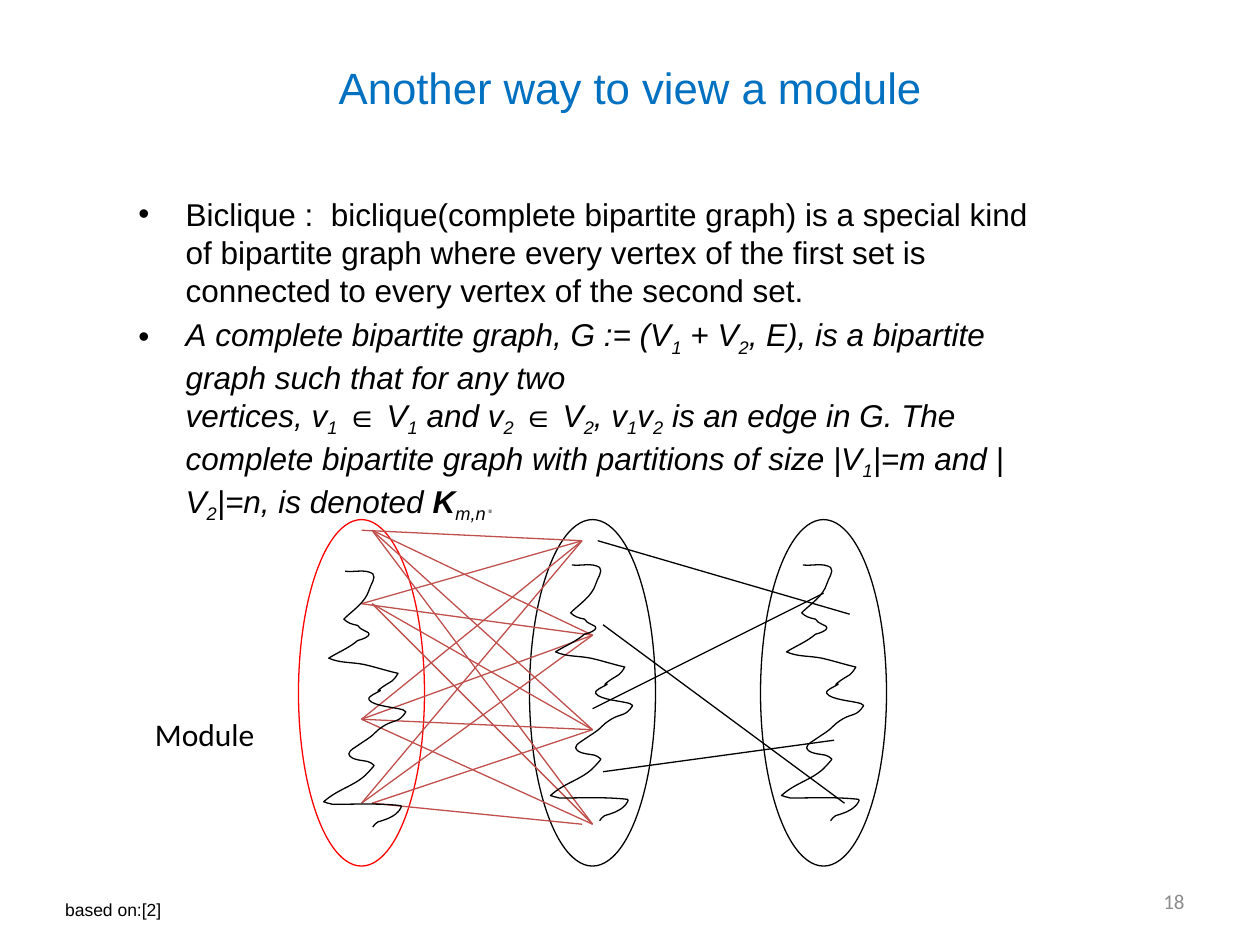
from lxml.etree import SubElement
from pptx import Presentation
from pptx.dml.color import RGBColor
from pptx.enum.shapes import MSO_CONNECTOR, MSO_SHAPE
from pptx.enum.text import MSO_ANCHOR, PP_ALIGN
from pptx.oxml.ns import qn
from pptx.util import Pt

BLACK = RGBColor(0x00, 0x00, 0x00)
BLUE = RGBColor(0x00, 0x70, 0xC0)
RED = RGBColor(0xFF, 0x00, 0x00)
BRICK = RGBColor(0xC0, 0x50, 0x4D)
GRAY = RGBColor(0x8C, 0x8C, 0x8C)

TITLE = ("Another way to view a module", (36, 21.6, 648, 56.2), "Arial", 25, BLUE, PP_ALIGN.CENTER, MSO_ANCHOR.MIDDLE)
LABELS = [
    ("18", (516, 500.4, 168, 28.8), "Calibri", 12, GRAY, PP_ALIGN.RIGHT, MSO_ANCHOR.MIDDLE),
    ("Module", (81.4, 404.9, 102.2, 28.8), "Calibri", 18, BLACK, PP_ALIGN.LEFT, MSO_ANCHOR.TOP),
    ("based on:[2]", (30.2, 510.1, 132.5, 19.4), "Arial", 10, BLACK, PP_ALIGN.LEFT, MSO_ANCHOR.TOP),
]

NO_BREAK_MARK, SUBSCRIPT_MARK = "~", "_"
BULLETS = [
    [("Biclique : ~biclique(complete bipartite graph) is a special kind of~bipartite graph~where every~vertex~"
      "of the first set is connected to every vertex of the second set.", False, False, BLACK)],
    [("A~complete bipartite graph,~G~:= (V_1_~+~V_2_,~E), is a bipartite graph such that for any two "
      "vertices,~v_1_~∈~V_1_~and~v_2_~∈~V_2_,~v_1_v_2_~is an edge in~G. The complete bipartite graph "
      "with partitions of size |V_1_|=m~and |V_2_|=n, is denoted~", False, True, BLACK),
     ("K", True, True, BLACK),
     ("_m,n_", False, True, BLACK),
     (".", False, False, GRAY)],
]

ELLIPSE_COLORS = [RED, BLACK, BLACK]
ELLIPSE_LEFT, ELLIPSE_TOP, ELLIPSE_PITCH = 170.6, 296.9, 132
ELLIPSE_WIDTH, ELLIPSE_HEIGHT = 72, 198

MODULE_X, NEIGHBOR_X, EDGE_SHIFT = 206.6, 332.6, 6
MODULE_ROWS = [303, 345, 411, 459]
NEIGHBOR_ROWS = [309, 363, 417, 471]
START_SHIFTS = ["0111", "0011", "0000", "0011"]
END_SHIFTS = ["0111", "0111", "0111", "0110"]
OUTER_EDGES = [
    (341.6, 309, 485.6, 351),
    (338.6, 405, 470.6, 339),
    (344.6, 441, 476.6, 423),
    (482.6, 459, 344.6, 357),
]

SQUIGGLE_ORIGINS = [(185, 325), (314.6, 321.4), (446.6, 321.4)]
SQUIGGLE_UNIT = 0.72
SQUIGGLE_START = (17, 2)
SQUIGGLE_CURVES = [
    (24, 3, 33, 0, 39, 4), (42, 7, 37, 13, 36, 17), (33, 27, 23, 33, 16, 40),
    (19, 43, 22, 44, 27, 45), (28, 47, 30, 48, 32, 49), (33, 50, 36, 50, 36, 52),
    (36, 54, 31, 56, 27, 57), (20, 63, 12, 66, 4, 71), (13, 75, 22, 74, 32, 76),
    (41, 78, 50, 81, 59, 83), (55, 90, 54, 89, 48, 93), (35, 102, 54, 92, 39, 100),
    (38, 101, 35, 102, 36, 104), (39, 109, 57, 110, 63, 112), (63, 113, 66, 113, 65, 114),
    (60, 122, 56, 120, 49, 124), (39, 130, 43, 130, 32, 137), (29, 139, 26, 141, 23, 143),
    (22, 144, 20, 145, 20, 147), (21, 152, 31, 152, 35, 153), (36, 154, 39, 154, 40, 156),
    (40, 157, 33, 164, 33, 164), (23, 173, 11, 175, 0, 185), (2, 186, 4, 186, 7, 187),
    (25, 187, 43, 186, 61, 188), (63, 188, 60, 192, 59, 193), (54, 198, 49, 199, 43, 201),
    (39, 204, 41, 203, 39, 205),
]


def style_run(run, font, size, color):
    run.font.name = font
    run.font.size = Pt(size)
    run.font.color.rgb = color


def add_text_frame(slide, box, anchor):
    text_frame = slide.shapes.add_textbox(*map(Pt, box)).text_frame
    text_frame.word_wrap = True
    text_frame.vertical_anchor = anchor
    return text_frame


def add_label(slide, text, box, font, size, color, alignment, anchor):
    paragraph = add_text_frame(slide, box, anchor).paragraphs[0]
    paragraph.text = text
    paragraph.alignment = alignment
    style_run(paragraph.runs[0], font, size, color)


def add_bullet(paragraph, parts):
    paragraph.space_before = Pt(3.6)
    properties = paragraph._p.get_or_add_pPr()
    properties.set("marL", str(Pt(27)))
    properties.set("indent", str(Pt(-27)))
    SubElement(properties, qn("a:buFont"), typeface="Arial")
    SubElement(properties, qn("a:buChar"), char="•")
    for text, bold, italic, color in parts:
        for index, piece in enumerate(text.replace(NO_BREAK_MARK, chr(160)).split(SUBSCRIPT_MARK)):
            if not piece:
                continue
            run = paragraph.add_run()
            run.text = piece
            style_run(run, "Arial", 18, color)
            run.font.bold = bold
            run.font.italic = italic
            if index % 2:
                run.font._element.set("baseline", "-25000")


def style_outline(shape, color):
    shape.shadow.inherit = False
    shape.fill.background()
    shape.line.color.rgb = color
    shape.line.width = Pt(0.75)


def add_edge(slide, ends, color):
    connector = slide.shapes.add_connector(MSO_CONNECTOR.STRAIGHT, *map(Pt, ends))
    connector.line.color.rgb = color
    connector.line.width = Pt(0.75)
    SubElement(connector._element.spPr, qn("a:effectLst"))


def add_squiggle(slide, origin):
    coordinates = [*SQUIGGLE_START]
    for curve in SQUIGGLE_CURVES:
        coordinates.extend(curve)
    lengths = [Pt(value * SQUIGGLE_UNIT) for value in coordinates]
    points = list(zip(lengths[::2], lengths[1::2]))
    builder = slide.shapes.build_freeform(*points[0])
    builder.add_line_segments(points[1:], close=False)
    shape = builder.convert_to_shape(*map(Pt, origin))
    style_outline(shape, BLACK)

    outline = next(shape._element.iter(qn("a:path")))
    segments = outline.findall(qn("a:lnTo"))
    for start in range(0, len(segments), 3):
        curve = SubElement(outline, qn("a:cubicBezTo"))
        for segment in segments[start:start + 3]:
            curve.append(segment[0])
            outline.remove(segment)


def main():
    presentation = Presentation()
    presentation.slide_width = Pt(720)
    presentation.slide_height = Pt(540)
    slide = presentation.slides.add_slide(presentation.slide_layouts[6])

    add_label(slide, *TITLE)
    body = add_text_frame(slide, (72, 108, 528, 396), MSO_ANCHOR.TOP)
    for index, parts in enumerate(BULLETS):
        add_bullet(body.add_paragraph() if index else body.paragraphs[0], parts)

    for index, color in enumerate(ELLIPSE_COLORS):
        left = ELLIPSE_LEFT + index * ELLIPSE_PITCH
        box = (left, ELLIPSE_TOP, ELLIPSE_WIDTH, ELLIPSE_HEIGHT)
        style_outline(slide.shapes.add_shape(MSO_SHAPE.OVAL, *map(Pt, box)), color)

    for start_y, start_shifts, end_shifts in zip(MODULE_ROWS, START_SHIFTS, END_SHIFTS):
        for end_y, start_shift, end_shift in zip(NEIGHBOR_ROWS, start_shifts, end_shifts):
            start_x = MODULE_X + EDGE_SHIFT * int(start_shift)
            end_x = NEIGHBOR_X + EDGE_SHIFT * int(end_shift)
            add_edge(slide, (start_x, start_y, end_x, end_y), BRICK)
    for ends in OUTER_EDGES:
        add_edge(slide, ends, BLACK)

    for origin in SQUIGGLE_ORIGINS:
        add_squiggle(slide, origin)

    for label in LABELS:
        add_label(slide, *label)

    presentation.save("out.pptx")


if __name__ == "__main__":
    main()
